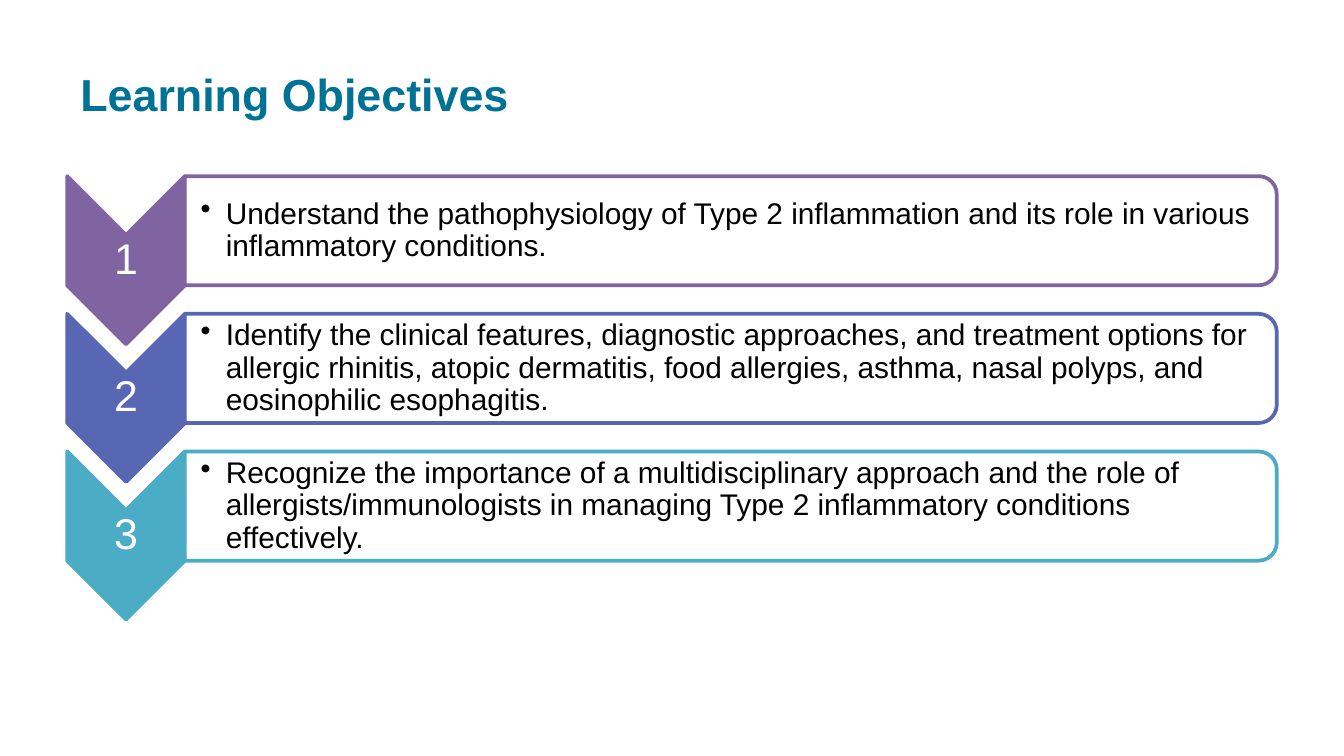
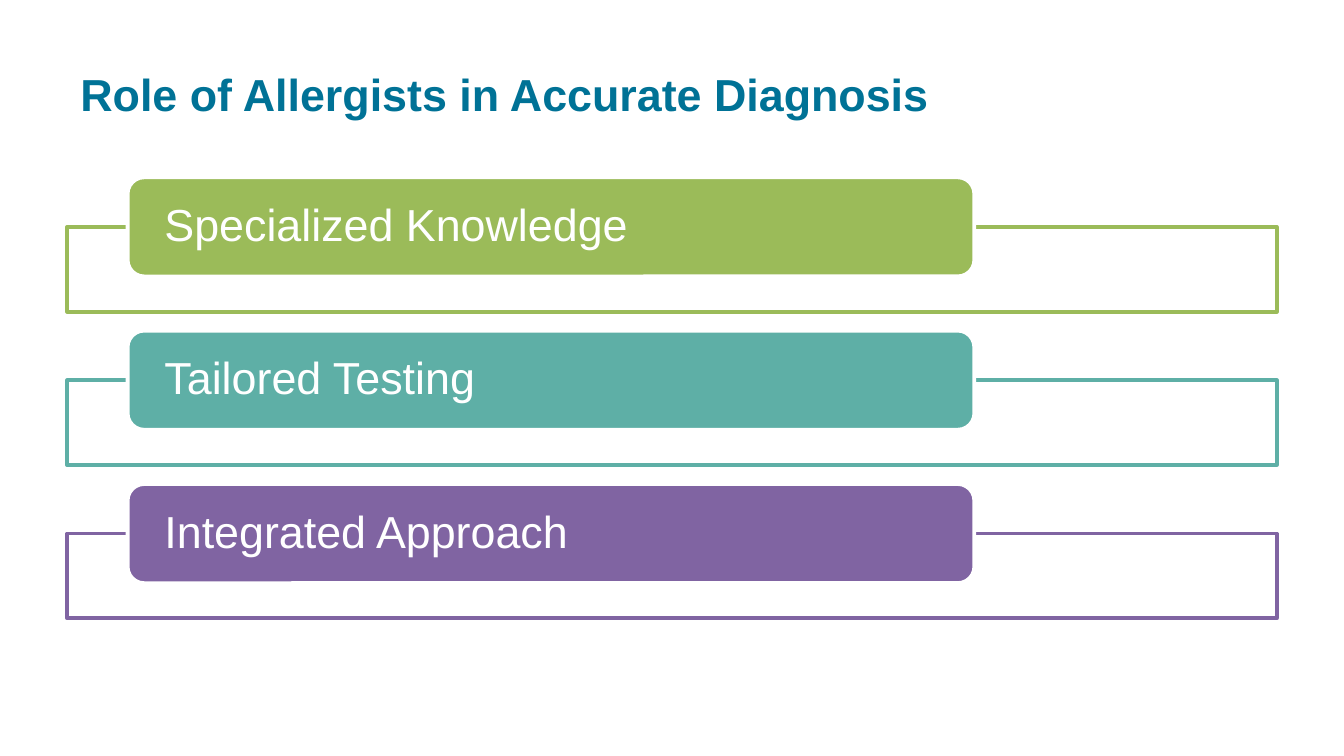
from lxml import etree
from pptx import Presentation
from pptx.dml.color import RGBColor
from pptx.enum.shapes import MSO_SHAPE
from pptx.enum.text import MSO_ANCHOR, PP_ALIGN
from pptx.oxml.ns import qn
from pptx.util import Pt

# Presets
CHEVRON = MSO_SHAPE.CHEVRON
ROUND_SIDE = MSO_SHAPE.ROUND_2_SAME_RECTANGLE
ROUND_RECT = MSO_SHAPE.ROUNDED_RECTANGLE
RECT = MSO_SHAPE.RECTANGLE
MIDDLE = MSO_ANCHOR.MIDDLE
LEFT, CENTER = PP_ALIGN.LEFT, PP_ALIGN.CENTER

# Colours
WHITE = RGBColor(0xFF, 0xFF, 0xFF)
BLACK = RGBColor(0x00, 0x00, 0x00)
TITLE_BLUE = RGBColor(0x00, 0x72, 0x96)
PURPLE = RGBColor(0x80, 0x64, 0xA2)
INDIGO = RGBColor(0x57, 0x67, 0xB4)
AQUA = RGBColor(0x4B, 0xAC, 0xC6)
GREEN = RGBColor(0x9B, 0xBB, 0x59)
TEAL = RGBColor(0x5E, 0xAF, 0xA6)

# Text formats
TITLE = {"name": "Arial", "size": Pt(24), "bold": True, "color": TITLE_BLUE}
NUMBER = {"name": "Arial", "size": Pt(23), "color": WHITE}
BODY = {"name": "Arial", "size": Pt(16), "color": BLACK}
LABEL = {"name": "Arial", "size": Pt(24), "color": WHITE}

# Shared content area
LEFT_X, RIGHT_X = 36, 684

OBJECTIVES = [
    (PURPLE, "Understand the pathophysiology of Type 2 inflammation and its role "
             "in various inflammatory conditions."),
    (INDIGO, "Identify the clinical features, diagnostic approaches, and treatment "
             "options for allergic rhinitis, atopic dermatitis, food allergies, "
             "asthma, nasal polyps, and eosinophilic esophagitis."),
    (AQUA, "Recognize the importance of a multidisciplinary approach and the role "
           "of allergists/immunologists in managing Type 2 inflammatory conditions "
           "effectively."),
]
ROLES = [(GREEN, "Specialized Knowledge"), (TEAL, "Tailored Testing"),
         (PURPLE, "Integrated Approach")]


def write(sp, text, fmt, align=LEFT, insets=(7.2, 3.6, 7.2, 3.6), spacing=None):
    tf = sp.text_frame
    tf.word_wrap = True
    tf.vertical_anchor = MIDDLE
    for side, inset in zip(("left", "top", "right", "bottom"), insets):
        setattr(tf, f"margin_{side}", Pt(inset))
    p = tf.paragraphs[0]
    p.alignment = align
    p.line_spacing = spacing
    r = p.add_run()
    r.text = text
    for key, value in fmt.items():
        if key == "color":
            r.font.color.rgb = value
        else:
            setattr(r.font, key, value)
    return p


def add_text(slide, x, y, w, h, text, fmt, **layout):
    sp = slide.shapes.add_textbox(Pt(x), Pt(y), Pt(w), Pt(h))
    return write(sp, text, fmt, **layout)


def add_box(slide, kind, x, y, w, h, fill, line, alpha=None):
    sp = slide.shapes.add_shape(kind, Pt(x), Pt(y), Pt(w), Pt(h))
    sp.shadow.inherit = False
    sp.fill.solid()
    sp.fill.fore_color.rgb = fill
    sp.line.color.rgb = line
    sp.line.width = Pt(2)
    if alpha:
        clr = sp.fill._xPr.find(qn("a:solidFill"))[0]
        etree.SubElement(clr, qn("a:alpha")).set("val", str(alpha * 1000))
    return sp


def add_turned(slide, kind, x, y, w, h, *style):
    """Place a shape turned by 90 degrees so that it covers the given area."""
    sp = add_box(slide, kind, x + (w - h) / 2, y + (h - w) / 2, h, w, *style)
    sp.rotation = 90


def add_bullet(p, indent):
    pPr = p._p.get_or_add_pPr()
    pPr.set("marL", str(Pt(indent)))
    pPr.set("indent", str(-Pt(indent)))
    etree.SubElement(pPr, qn("a:buChar")).set("char", "•")


def add_titled_slide(prs, title):
    slide = prs.slides.add_slide(prs.slide_layouts[6])
    add_text(slide, LEFT_X, 16.5, RIGHT_X - LEFT_X, 67.5, title, TITLE)
    return slide


def add_objective(slide, y, number, color, text):
    chevron_w, chevron_h, panel_h = 63, 90, 58.5
    notch = chevron_w / 2
    panel_x = LEFT_X + chevron_w
    panel_w = RIGHT_X - panel_x
    # Numbered chevron
    add_turned(slide, CHEVRON, LEFT_X, y, chevron_w, chevron_h, color, color)
    add_text(slide, LEFT_X, y + notch, chevron_w, chevron_h - 2 * notch, str(number),
             NUMBER, align=CENTER, insets=(1.15,) * 4, spacing=0.9)
    # Panel with the objective
    add_turned(slide, ROUND_SIDE, panel_x, y, panel_w, panel_h, WHITE, color, 90)
    p = add_text(slide, panel_x, y + 3, panel_w - 3, panel_h - 6, text,
                 BODY, insets=(8.5, 0.8, 0.8, 0.8), spacing=0.9)
    add_bullet(p, 13.5)


def add_role(slide, y, color, text):
    add_box(slide, RECT, LEFT_X, y + 26.6, RIGHT_X - LEFT_X, 45.4, WHITE, color, 90)
    tab = add_box(slide, ROUND_RECT, 68.4, y, 453.6, 53.1, color, WHITE)
    write(tab, text, LABEL, insets=(17.15, 0, 17.15, 0), spacing=0.9)


def main():
    prs = Presentation()
    prs.slide_width, prs.slide_height = Pt(720), Pt(405)

    # Slide 1: objectives
    slide = add_titled_slide(prs, "Learning Objectives")
    for i, (color, text) in enumerate(OBJECTIVES):
        add_objective(slide, 94.4 + 73.75 * i, i + 1, color, text)

    # Slide 2: roles
    slide = add_titled_slide(prs, "Role of Allergists in Accurate Diagnosis")
    for i, (color, text) in enumerate(ROLES):
        add_role(slide, 95 + 82.15 * i, color, text)

    prs.save("out.pptx")


if __name__ == "__main__":
    main()
